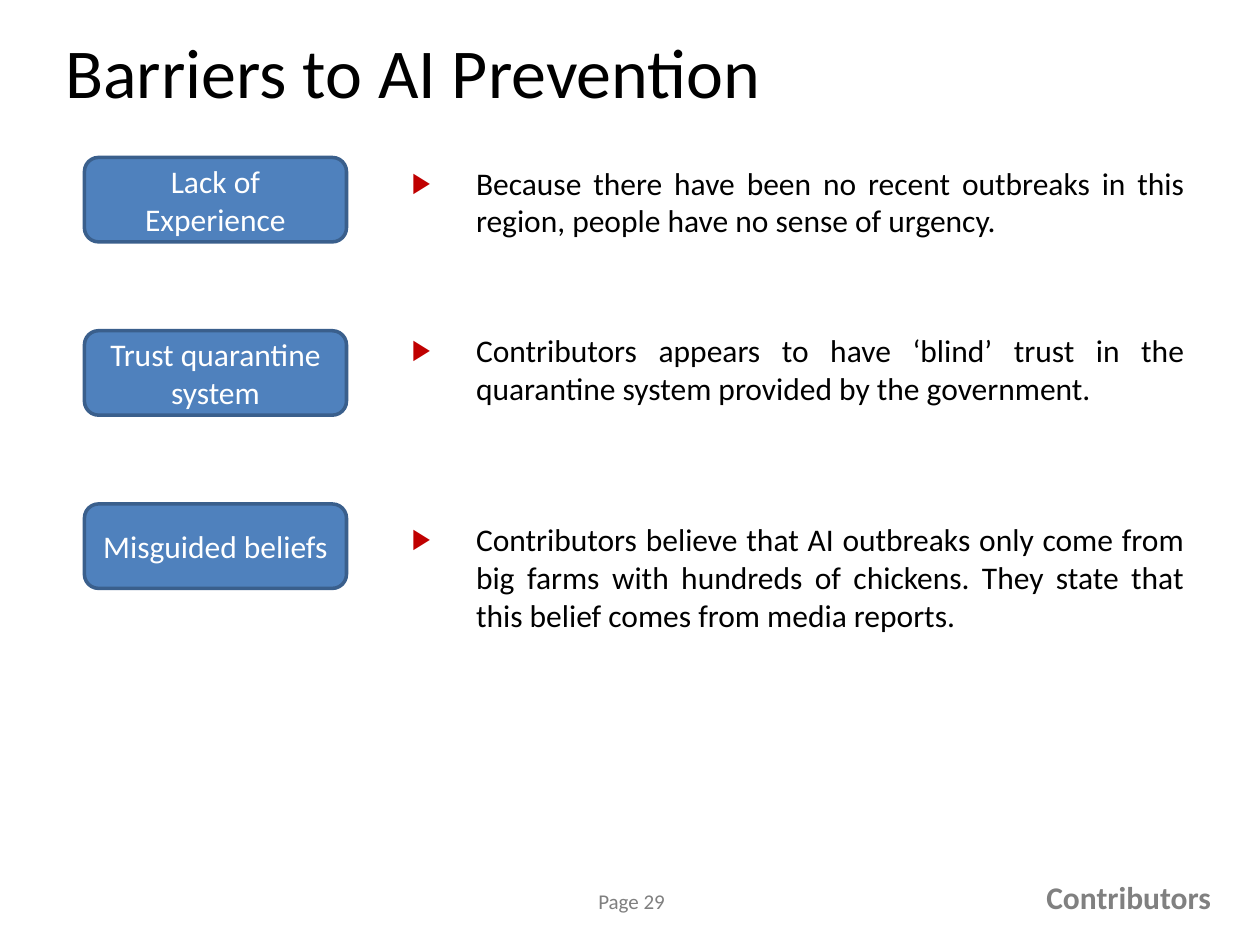
from dataclasses import dataclass

from lxml.etree import SubElement
from pptx import Presentation
from pptx.dml.color import RGBColor
from pptx.enum.shapes import MSO_SHAPE as Shape
from pptx.enum.text import MSO_ANCHOR as Anchor, MSO_AUTO_SIZE as AutoSize, PP_ALIGN as Align
from pptx.oxml.ns import qn
from pptx.util import Inches, Pt

FONT = "Calibri"
LABEL_TOP, LABEL_PITCH = 1.25, 2.75 / 2


@dataclass
class Barrier:
    label: str
    detail: str
    detail_top: float
    detail_height: float


BARRIERS = [
    Barrier("Lack of Experience",
            "Because there have been no recent outbreaks in this region, "
            "people have no sense of urgency.", 1.25, 1),
    Barrier("Trust quarantine system",
            "Contributors appears to have ‘blind’ trust in the quarantine "
            "system provided by the government.", 2.58, 1.33),
    Barrier("Misguided beliefs",
            "Contributors believe that AI outbreaks only come from big farms "
            "with hundreds of chickens. They state that this belief comes "
            "from media reports.", 4.08, 1.33),
]


def color(value: str) -> RGBColor:
    return RGBColor.from_string(value)


def write(shape, text: str, *, size: float = 18, fill: str = "000000", bold: bool = False,
          align=Align.LEFT, anchor=Anchor.TOP, wrap: bool = True):
    frame = shape.text_frame
    frame.word_wrap = wrap
    frame.auto_size = AutoSize.NONE if wrap else AutoSize.SHAPE_TO_FIT_TEXT
    frame.vertical_anchor = anchor
    para = frame.paragraphs[0]
    para.alignment = align
    span = para.add_run()
    span.text = text
    span.font.name = FONT
    span.font.size = Pt(size)
    span.font.bold = bold
    span.font.color.rgb = color(fill)
    return para


def add_text(page, left: float, top: float, width: float, height: float, text: str, **style):
    box = page.shapes.add_textbox(Inches(left), Inches(top), Inches(width), Inches(height))
    return write(box, text, **style)


def add_bullet(para, symbol: str, fill: str) -> None:
    props = para._p.get_or_add_pPr()
    props.set("marL", str(Inches(0.51)))
    props.set("indent", str(Inches(-0.51)))
    SubElement(SubElement(props, qn("a:buClr")), qn("a:srgbClr"), val=fill)
    SubElement(props, qn("a:buSzPct"), val="90000")
    SubElement(props, qn("a:buFont"), typeface=FONT)
    SubElement(props, qn("a:buChar"), char=symbol)


def add_label(page, top: float, text: str) -> None:
    label = page.shapes.add_shape(Shape.ROUNDED_RECTANGLE, Inches(0.67), Inches(top),
                                  Inches(2.08), Inches(0.67))
    label.shadow.inherit = False
    label.fill.solid()
    label.fill.fore_color.rgb = color("4F81BD")
    label.line.color.rgb = color("3A5F8C")
    label.line.width = Pt(2)
    write(label, text, fill="FFFFFF", align=Align.CENTER, anchor=Anchor.MIDDLE)


def main() -> None:
    deck = Presentation()
    deck.slide_width, deck.slide_height = Inches(10), Inches(7.5)
    page = deck.slides.add_slide(deck.slide_layouts[6])

    add_text(page, 0.42, 0.17, 9.5, 0.78, "Barriers to AI Prevention",
             size=40, anchor=Anchor.MIDDLE)
    for index, barrier in enumerate(BARRIERS):
        add_label(page, LABEL_TOP + index * LABEL_PITCH, barrier.label)
        para = add_text(page, 3.17, barrier.detail_top, 6.33, barrier.detail_height,
                        barrier.detail, align=Align.JUSTIFY)
        add_bullet(para, "▶", "C00000")
    add_text(page, 4.65, 7, 0.77, 0.3, "Page 29", size=12, fill="7F7F7F", wrap=False)
    add_text(page, 8.19, 6.92, 1.52, 0.4, "Contributors", fill="808080", bold=True,
             align=Align.RIGHT, wrap=False)

    deck.save("out.pptx")


if __name__ == "__main__":
    main()
